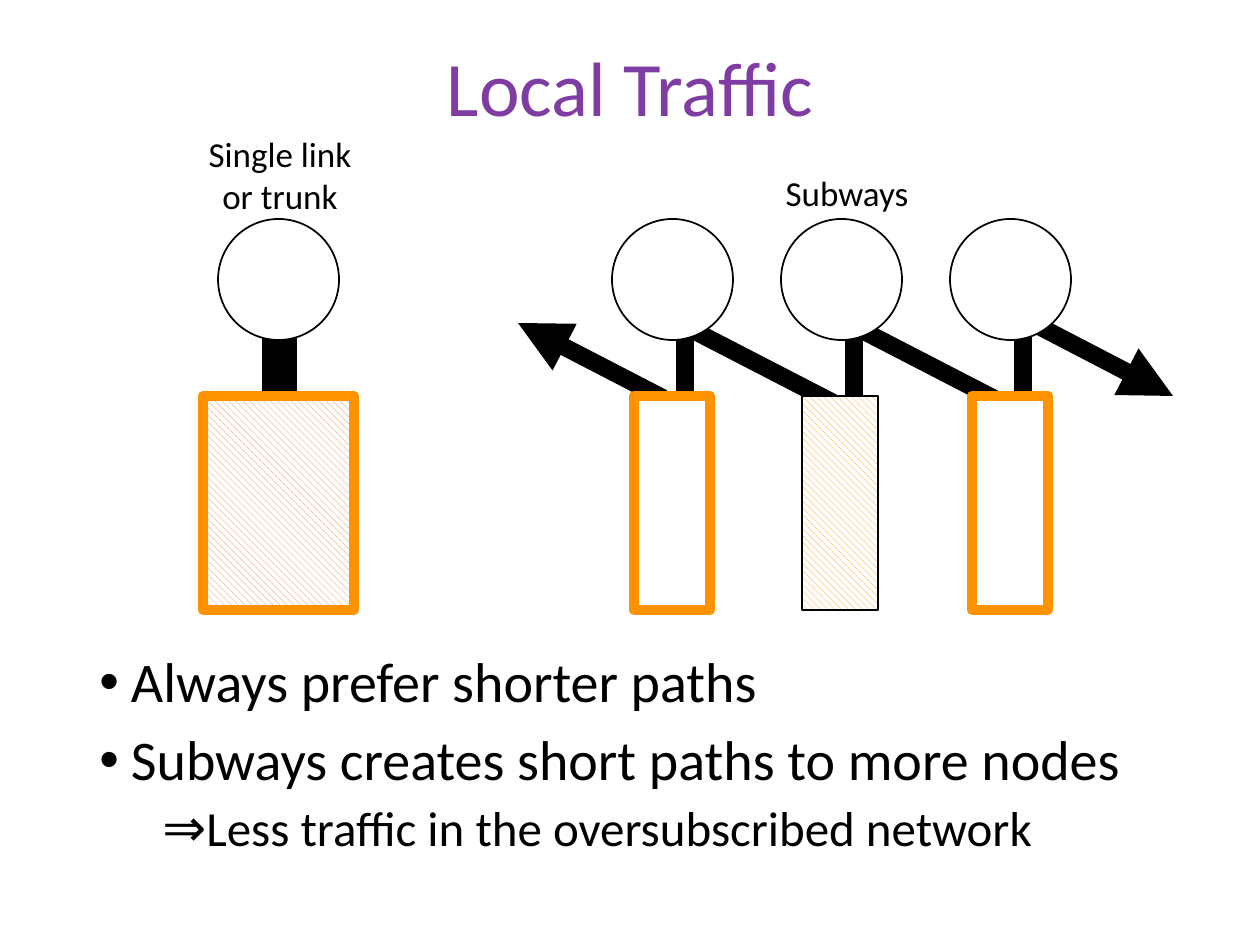
from pptx import Presentation
from pptx.dml.color import RGBColor
from pptx.enum.dml import MSO_PATTERN
from pptx.enum.shapes import MSO_CONNECTOR, MSO_SHAPE
from pptx.enum.text import MSO_ANCHOR, PP_ALIGN
from pptx.oxml.ns import qn
from pptx.util import Emu, Inches, Pt
from lxml.etree import SubElement

PX = Inches(1) / 126
FONT = "Calibri"
BLACK = RGBColor(0x00, 0x00, 0x00)
WHITE = RGBColor(0xFF, 0xFF, 0xFF)
PURPLE = RGBColor(0x7F, 0x3C, 0xA2)
ORANGE = RGBColor(0xFF, 0x92, 0x00)
RUST = RGBColor(0xED, 0x7D, 0x31)

# Shared geometry of the network drawing
NODE_TOP, NODE_SIZE = 219, 121
RACK_TOP, RACK_HEIGHT = 396, 214
LINK_TOP, LINK_BOTTOM = 315, 415
SUBWAY_LEFT, SUBWAY_PITCH = 612, 169


def px(value):
    return Emu(round(value * PX))


def add_text_box(slide, left, top, width, height, wrap=True, anchor=MSO_ANCHOR.TOP):
    box = slide.shapes.add_textbox(px(left), px(top), px(width), px(height))
    box.text_frame.word_wrap = wrap
    box.text_frame.vertical_anchor = anchor
    return box.text_frame


def next_paragraph(frame):
    first = frame.paragraphs[0]
    return frame.add_paragraph() if first.runs else first


def add_run(paragraph, text, size, color=BLACK):
    run = paragraph.add_run()
    run.text = text
    run.font.name = FONT
    run.font.size = Pt(size)
    run.font.color.rgb = color


def add_label(slide, left, top, width, height, lines):
    frame = add_text_box(slide, left, top, width, height, wrap=False)
    for line in lines:
        paragraph = next_paragraph(frame)
        paragraph.alignment = PP_ALIGN.CENTER
        add_run(paragraph, line, 20)


def add_point(frame, runs, margin, hanging=0, space=0, bullet=None):
    paragraph = next_paragraph(frame)
    paragraph.line_spacing = 0.9
    paragraph.space_before = Pt(space)
    properties = paragraph._p.get_or_add_pPr()
    properties.set("marL", str(Inches(margin)))
    properties.set("indent", str(-Inches(hanging)))
    if bullet:
        SubElement(properties, qn("a:buFont"), typeface="Arial")
        SubElement(properties, qn("a:buChar"), char=bullet)
    for text, size in runs:
        add_run(paragraph, text, size)


def add_link(slide, start, end, width=10, arrow=False):
    link = slide.shapes.add_connector(
        MSO_CONNECTOR.STRAIGHT, *(px(value) for value in (*start, *end)))
    link.line.color.rgb = BLACK
    link.line.width = Pt(width)
    if arrow:
        SubElement(link.line._get_or_add_ln(), qn("a:tailEnd"), type="triangle")
    SubElement(link._element.spPr, qn("a:effectLst"))


def add_outlined(slide, kind, left, top, width, height, line, weight, hatch=None):
    shape = slide.shapes.add_shape(kind, px(left), px(top), px(width), px(height))
    shape.shadow.inherit = False
    if hatch:
        shape.fill.patterned()
        shape.fill.pattern = MSO_PATTERN.WIDE_DOWNWARD_DIAGONAL
        shape.fill.fore_color.rgb = hatch
        shape.fill.back_color.rgb = WHITE
    else:
        shape.fill.solid()
        shape.fill.fore_color.rgb = WHITE
    shape.line.color.rgb = line
    shape.line.width = Pt(weight)


def add_node(slide, left):
    add_outlined(slide, MSO_SHAPE.OVAL, left, NODE_TOP, NODE_SIZE, NODE_SIZE, BLACK, 1)


def add_rack(slide, left, width, line=ORANGE, weight=6, hatch=None):
    add_outlined(slide, MSO_SHAPE.RECTANGLE, left, RACK_TOP, width, RACK_HEIGHT,
                 line, weight, hatch)


def add_trunk(slide):
    add_link(slide, (280, LINK_BOTTOM), (280, LINK_TOP), width=20)
    add_rack(slide, 203, 151, hatch=RUST)
    add_node(slide, 218)
    add_label(slide, 195, 126, 170, 97, ["Single link", "or trunk"])


def add_subways(slide):
    columns = [SUBWAY_LEFT + i * SUBWAY_PITCH for i in range(3)]
    # Links go first, so that nodes and racks cover their ends
    for left in columns:
        add_link(slide, (left + 73, LINK_BOTTOM), (left + 73, LINK_TOP))
    for left in columns[:-1]:
        add_link(slide, (left + 245, LINK_BOTTOM), (left + 34, 306))
    add_link(slide, (1000, 306), (1173, 396), arrow=True)
    add_link(slide, (663, 398), (518, 323), arrow=True)
    for left in columns:
        add_node(slide, left)
    # The middle rack is the oversubscribed one
    add_rack(slide, columns[0] + 22, 76)
    add_rack(slide, columns[1] + 21, 76, BLACK, 1, hatch=ORANGE)
    add_rack(slide, columns[2] + 22, 76)
    add_label(slide, 772, 165, 150, 55, ["Subways"])


def main():
    presentation = Presentation()
    presentation.slide_width, presentation.slide_height = Inches(10), Inches(7.5)
    slide = presentation.slides.add_slide(presentation.slide_layouts[6])

    # Title
    title = add_text_box(slide, 87, 0, 1086, 183, anchor=MSO_ANCHOR.MIDDLE)
    paragraph = title.paragraphs[0]
    paragraph.alignment = PP_ALIGN.CENTER
    paragraph.line_spacing = 0.9
    add_run(paragraph, "Local Traffic", 44, PURPLE)

    # Takeaways
    body = add_text_box(slide, 87, 648, 1118, 242)
    add_point(body, [("Always prefer shorter paths", 32)], 0.25, 0.25, bullet="•")
    add_point(body, [("Subways creates short paths to more nodes", 32)],
              0.25, 0.25, space=10, bullet="•")
    add_point(body, [("⇒", 30), ("Less traffic in the oversubscribed network", 28)],
              0.5, space=5)

    # Drawings
    add_subways(slide)
    add_trunk(slide)
    presentation.save("out.pptx")


if __name__ == "__main__":
    main()
